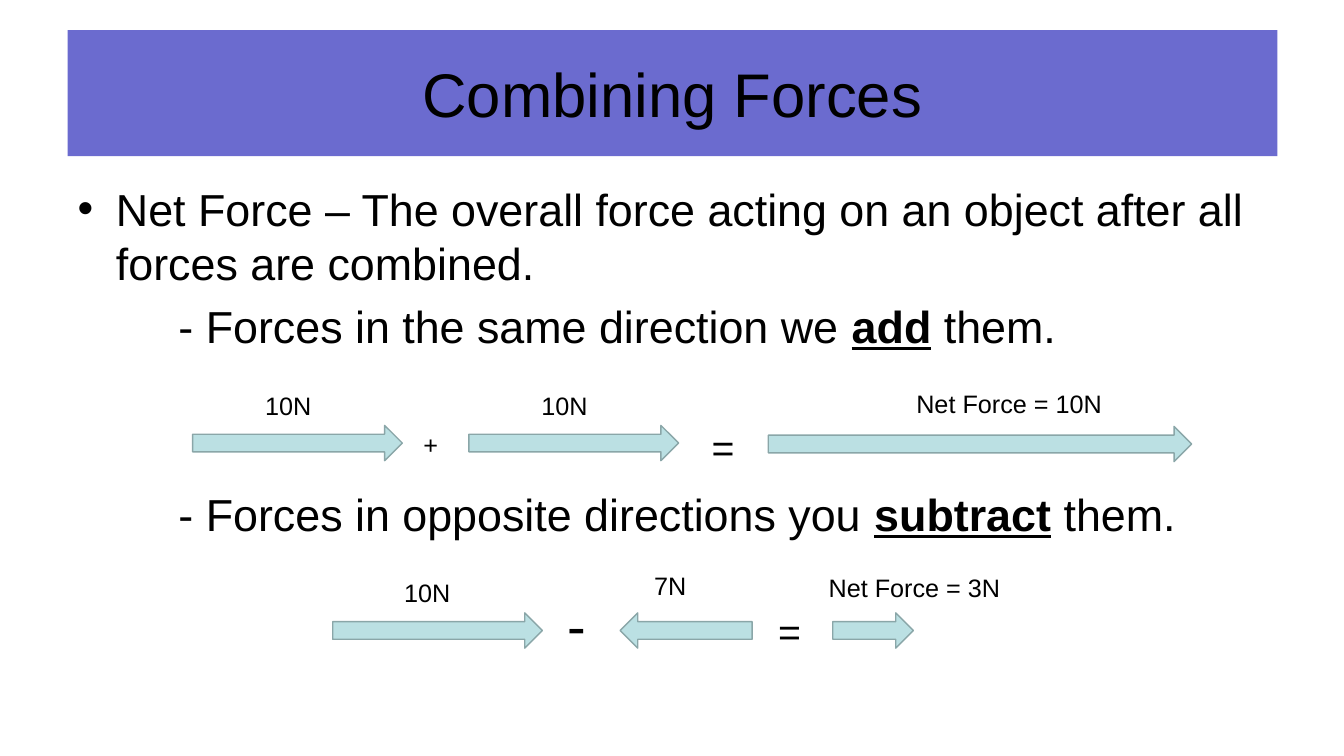
from pptx import Presentation
from pptx.dml.color import RGBColor
from pptx.enum.shapes import MSO_SHAPE as Shape
from pptx.enum.text import MSO_ANCHOR as Anchor, MSO_AUTO_SIZE as AutoSize, PP_ALIGN as Align
from pptx.util import Inches, Pt
from lxml.etree import SubElement
from pptx.oxml.ns import qn

BLACK = RGBColor(0x00, 0x00, 0x00)
BANNER = RGBColor(0x6B, 0x6B, 0xCF)
ARROW_FILL = RGBColor(0xBB, 0xE0, 0xE3)
ARROW_LINE = RGBColor(0x8A, 0xA6, 0xA8)


def write(paragraph, text, size=32, bold=False, underline=False):
    run = paragraph.add_run()
    run.text = text
    run.font.name = "Arial"
    run.font.size = Pt(size)
    run.font.bold = bold
    run.font.underline = underline
    run.font.color.rgb = BLACK


def place(shape, left, top, width, height):
    shape.left, shape.top = Inches(left), Inches(top)
    shape.width, shape.height = Inches(width), Inches(height)


deck = Presentation()
deck.slide_width, deck.slide_height = Inches(13.33), Inches(7.5)
slide = deck.slides.add_slide(deck.slide_layouts[1])

heading = slide.shapes.title
place(heading, 0.67, 0.3, 12, 1.25)
heading.fill.solid()
heading.fill.fore_color.rgb = BANNER
heading.text_frame.vertical_anchor = Anchor.MIDDLE
heading.text_frame.paragraphs[0].alignment = Align.CENTER
write(heading.text_frame.paragraphs[0], "Combining Forces", size=44)

rules = slide.placeholders[1]
place(rules, 0.67, 1.75, 12, 4.95)
rules.text_frame.auto_size = AutoSize.NONE

definition = rules.text_frame.paragraphs[0]
definition.space_before = Pt(7)
write(definition, "Net Force – The overall force acting on an object after all forces are combined.")
definition_format = definition._p.get_or_add_pPr()
definition_format.set("marL", str(Inches(0.38)))
definition_format.set("indent", str(-Inches(0.38)))
SubElement(definition_format, qn("a:buChar")).set("char", "•")

for opening, operation, gap in [
    ("- Forces in the same direction we ", "add", 7),
    ("- Forces in opposite directions you ", "subtract", 96),
]:
    rule = rules.text_frame.add_paragraph()
    rule.space_before = Pt(gap)
    write(rule, opening)
    write(rule, operation, bold=True, underline=True)
    write(rule, " them.")
    rule_format = rule._p.get_or_add_pPr()
    rule_format.set("marL", str(Inches(1)))
    rule_format.set("indent", "0")
    SubElement(rule_format, qn("a:buNone"))

for direction, left, top, length in [
    (Shape.RIGHT_ARROW, 1.91, 4.22, 2.08),
    (Shape.RIGHT_ARROW, 4.65, 4.22, 2.08),
    (Shape.RIGHT_ARROW, 7.62, 4.23, 4.2),
    (Shape.RIGHT_ARROW, 3.3, 6.08, 2.08),
    (Shape.LEFT_ARROW, 6.15, 6.08, 1.31),
    (Shape.RIGHT_ARROW, 8.26, 6.08, 0.8),
]:
    force = slide.shapes.add_shape(
        direction, Inches(left), Inches(top), Inches(length), Inches(0.35))
    force.shadow.inherit = False
    force.fill.solid()
    force.fill.fore_color.rgb = ARROW_FILL
    force.line.color.rgb = ARROW_LINE
    force.line.width = Pt(1)

for text, left, top, width, height, size in [
    ("10N", 2.53, 3.82, 0.85, 0.4, 18),
    ("+", 4.1, 4.21, 0.42, 0.4, 18),
    ("10N", 5.27, 3.82, 0.85, 0.4, 18),
    ("=", 6.96, 4.15, 0.39, 0.57, 28),
    ("Net Force = 10N", 8.99, 3.8, 2.2, 0.4, 18),
    ("10N", 3.91, 5.68, 0.85, 0.4, 18),
    ("-", 5.53, 5.81, 0.46, 0.77, 40),
    ("7N", 6.39, 5.61, 0.85, 0.4, 18),
    ("=", 7.62, 5.98, 0.39, 0.57, 28),
    ("Net Force = 3N", 8.12, 5.63, 1.98, 0.4, 18),
]:
    label = slide.shapes.add_textbox(
        Inches(left), Inches(top), Inches(width), Inches(height))
    label.text_frame.word_wrap = True
    write(label.text_frame.paragraphs[0], text, size=size)

deck.save("out.pptx")
